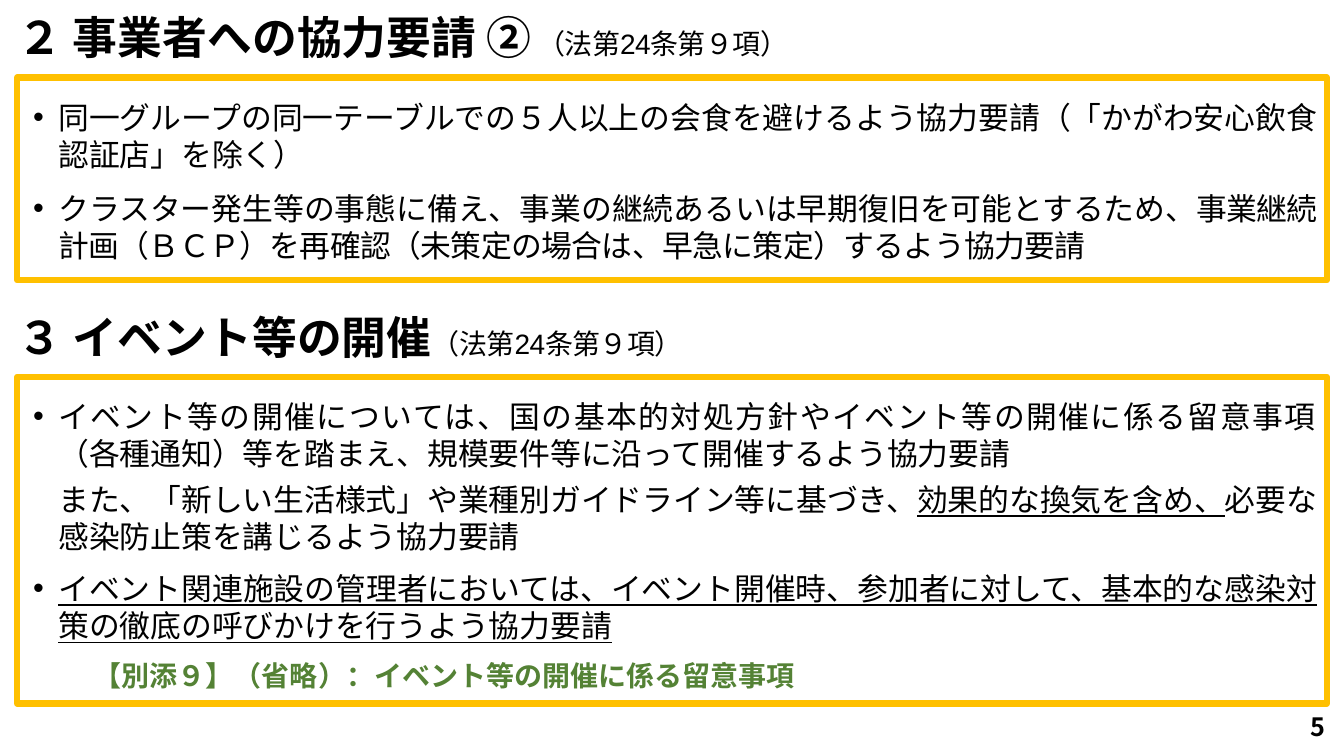
"""Build the slide of cooperation requests to businesses and event organisers."""
from lxml import etree
from pptx import Presentation
from pptx import util as u
from pptx.dml.color import RGBColor
from pptx.enum import shapes, text
from pptx.oxml.ns import qn

HUES = {"ink": "000000", "gold": "FFC000", "green": "548235"}
NOTO = "Noto Sans CJK JP"


def add_run(para, words, size, face="Arial", hue="ink", bold=False, line=False, gap=0):
    run = para.add_run()
    run.text = words
    font = run.font
    font.size, font.name, font.bold = u.Pt(size), face, bold
    font.underline = line
    font.color.rgb = RGBColor.from_string(HUES[hue])
    props = run._r.get_or_add_rPr()
    etree.SubElement(props, qn("a:ea")).set("typeface", NOTO)
    if gap:
        props.set("spc", str(gap))


def add_label(left, top, width, height):
    frame = slide.shapes.add_textbox(*map(u.Inches, (left, top, width, height))).text_frame
    frame.word_wrap = True
    frame.vertical_anchor = text.MSO_ANCHOR.MIDDLE
    return frame.paragraphs[0]


deck = Presentation()
deck.slide_width, deck.slide_height = u.Inches(13.33), u.Inches(7.5)
slide = deck.slides.add_slide(deck.slide_layouts[6])

heads = [
    (0.05, "２ 事業者への協力要請 ②", " （法第24条第９項）"),
    (3.02, "３ イベント等の開催", "（法第24条第９項）"),
]
for top, title, law in heads:
    para = add_label(0.08, top, 13.17, 0.7)
    para.line_spacing = 0.9
    add_run(para, title, 32, NOTO, bold=True)
    add_run(para, law, 20, gap=-50)

# Each paragraph: bullet, space before, left margin, size, runs
boxes = [
    (0.77, 2.01, [
        (True, 12, 0.31, 22, [
            ("同一グループの同一テーブルでの５人以上の会食を避けるよう協力要請（「かがわ安心飲食認証店」を除く）", {})]),
        (True, 12, 0.31, 22, [
            ("クラスター発生等の事態に備え、事業の継続あるいは早期復旧を可能とするため、", {}),
            ("事業継続計画（ＢＣＰ）を再確認（未策定の場合は、早急に策定）するよう協力要請", {"gap": -40})]),
    ]),
    (3.74, 3.24, [
        (True, 0, 0.31, 22, [
            ("イベント等の開催については、国の基本的対処方針やイベント等の開催に係る留意事項"
             "（各種通知）等を踏まえ、規模要件等に沿って開催するよう協力要請", {})]),
        (False, 6, 0.31, 22, [
            ("また、「新しい生活様式」や業種別ガイドライン等に基づき、", {}),
            ("効果的な換気を含め、", {"line": True}),
            ("必要な感染防止策を講じるよう協力要請", {})]),
        (True, 10, 0.31, 22, [
            ("イベント関連施設の管理者においては、イベント開催時、参加者に対して、"
             "基本的な感染対策の徹底の呼びかけを行うよう協力要請", {"line": True})]),
        (False, 10, 0.66, 20, [
            ("【別添９】（省略）：イベント等の開催に係る留意事項", {"hue": "green", "bold": True})]),
    ]),
]
for top, height, paras in boxes:
    box = slide.shapes.add_shape(
        shapes.MSO_SHAPE.RECTANGLE, *map(u.Inches, (0.17, top, 12.99, height)))
    box.shadow.inherit = False
    box.fill.background()
    box.line.color.rgb = RGBColor.from_string(HUES["gold"])
    box.line.width = u.Pt(4.5)
    frame = box.text_frame
    frame.word_wrap = True
    frame.vertical_anchor = text.MSO_ANCHOR.TOP
    frame.margin_top = u.Inches(0.2)
    for i, (bullet, before, left, size, runs) in enumerate(paras):
        para = frame.add_paragraph() if i else frame.paragraphs[0]
        para.alignment = text.PP_ALIGN.JUSTIFY
        para.space_before = u.Pt(before)
        para.line_spacing = u.Pt(round(size * 1.215, 1))
        props = para._p.get_or_add_pPr()
        props.set("marL", str(u.Inches(left)))
        props.set("indent", str(u.Inches(-0.25 if bullet else 0)))
        if bullet:
            etree.SubElement(props, qn("a:buFont")).set("typeface", "Arial")
            etree.SubElement(props, qn("a:buChar")).set("char", "•")
        for words, style in runs:
            add_run(para, words, size, **style)

para = add_label(10.24, 7.01, 3, 0.4)
para.alignment = text.PP_ALIGN.RIGHT
add_run(para, "5", 18, NOTO, bold=True)

deck.save("out.pptx")
